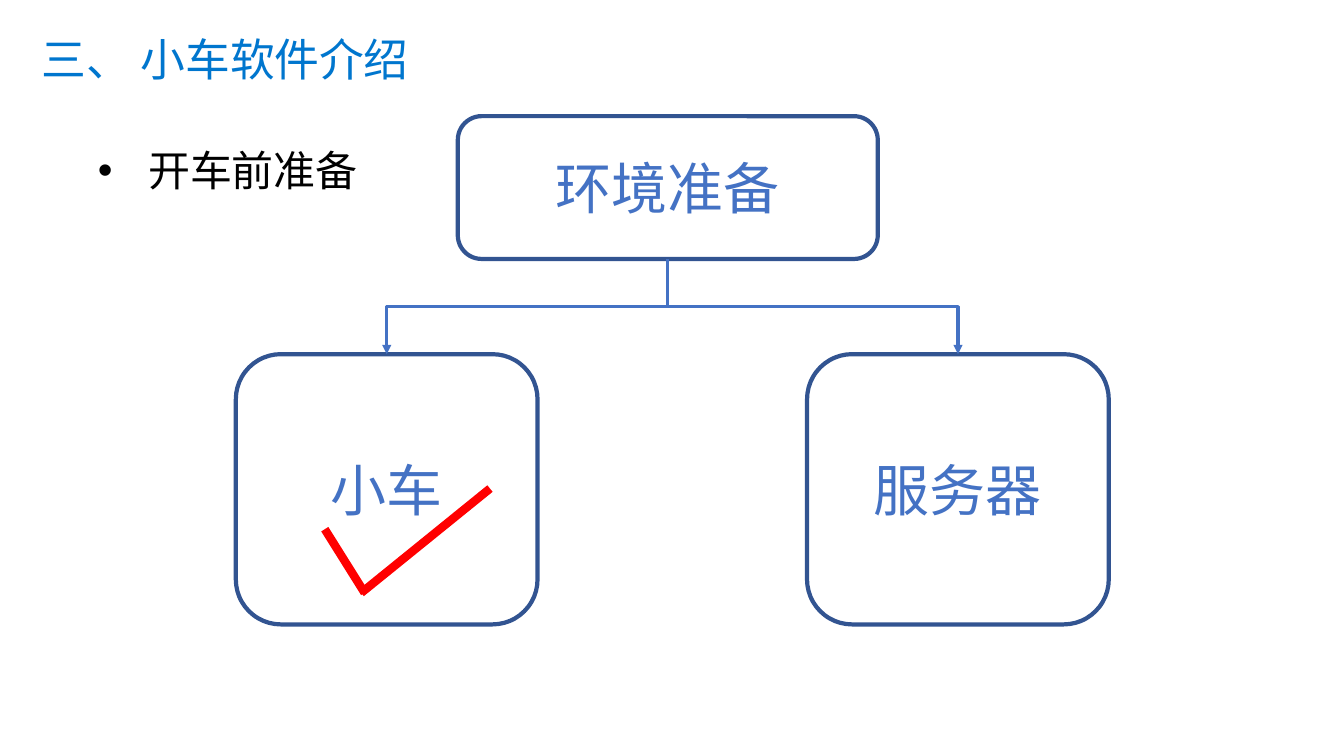
from pptx import Presentation
from pptx.dml.color import RGBColor
from pptx.enum import shapes, text
from pptx.oxml import ns
from pptx.util import Pt
from lxml import etree

FONT = "Noto Sans CJK SC"
COLORS = {
    "title": "0076CE",
    "body": "000000",
    "box_line": "325491",
    "accent": "4472C4",
    "tick": "FF0000",
}


def color(name):
    return RGBColor.from_string(COLORS[name])


def add_run(paragraph, words, size, color_name, spacing=None):
    run = paragraph.add_run()
    run.text = words
    run.font.size = Pt(size)
    run.font.name = FONT
    run.font.color.rgb = color(color_name)
    properties = run.font._element
    etree.SubElement(properties, ns.qn("a:ea"), typeface=FONT)
    if spacing is not None:
        properties.set("spc", str(round(spacing * 100)))


def add_heading(slide, box, words, size, color_name, bullet=False):
    """Put one line of text in the box, with or without a bullet."""
    shape = slide.shapes.add_textbox(*(Pt(length) for length in box))
    frame = shape.text_frame
    frame.word_wrap = True
    frame.margin_left = frame.margin_right = 0
    frame.margin_top = frame.margin_bottom = 0
    paragraph = frame.paragraphs[0]
    paragraph.line_spacing = Pt(37.3)
    if bullet:
        properties = paragraph._p.get_or_add_pPr()
        properties.set("marL", str(Pt(36)))
        properties.set("indent", str(-Pt(36)))
        etree.SubElement(properties, ns.qn("a:buFont"), typeface="Arial")
        etree.SubElement(properties, ns.qn("a:buChar"), char="•")
    add_run(paragraph, words, size, color_name, spacing=-0.2)


def add_node(slide, box, words):
    shape = slide.shapes.add_shape(
        shapes.MSO_SHAPE.ROUNDED_RECTANGLE, *(Pt(length) for length in box))
    shape.shadow.inherit = False
    shape.fill.background()
    shape.line.color.rgb = color("box_line")
    shape.line.width = Pt(3)
    frame = shape.text_frame
    frame.word_wrap = True
    frame.vertical_anchor = text.MSO_ANCHOR.MIDDLE
    paragraph = frame.paragraphs[0]
    paragraph.alignment = text.PP_ALIGN.CENTER
    add_run(paragraph, words, 40, "accent")


def add_line(slide, kind, start, end, color_name, width):
    connector = slide.shapes.add_connector(
        kind, *(Pt(length) for length in (*start, *end)))
    connector.line.color.rgb = color(color_name)
    connector.line.width = Pt(width)
    etree.SubElement(connector._element.spPr, ns.qn("a:effectLst"))
    return connector


def add_branch(slide, start, end):
    """Draw an elbow arrow that leaves downwards, as a turned connector."""
    middle_x, middle_y = (start[0] + end[0]) / 2, (start[1] + end[1]) / 2
    half_width, half_height = (end[1] - start[1]) / 2, abs(end[0] - start[0]) / 2
    to_right = end[0] > start[0]
    side = 1 if to_right else -1
    connector = add_line(
        slide, shapes.MSO_CONNECTOR.ELBOW,
        (middle_x + side * half_width, middle_y - half_height),
        (middle_x - side * half_width, middle_y + half_height),
        "accent", 2.25)
    frame = connector._element.spPr.find(ns.qn("a:xfrm"))
    frame.set("rot", str((270 if to_right else 90) * 60000))
    etree.SubElement(connector.line._get_or_add_ln(), ns.qn("a:tailEnd"),
                     type="triangle")


def add_tree(slide, box):
    """Place the root node at the top and its two children at the bottom."""
    left, top, width, height = box
    root_width, root_height = 300, 102
    child_width, child_height = 215.5, 193
    root_left = left + 158.5
    child_top = top + height - child_height

    # Nodes
    add_node(slide, (root_left, top, root_width, root_height), "环境准备")
    children = [("小车", left), ("服务器", left + width - child_width)]
    for words, child_left in children:
        add_node(slide, (child_left, child_top, child_width, child_height), words)

    # Arrows from the root to each child
    start = (root_left + root_width / 2, top + root_height)
    for _, child_left in children:
        add_branch(slide, start, (child_left + child_width / 2, child_top))


def add_tick(slide, box):
    """Draw the tick mark as two strokes that overlap at the bottom."""
    left, top, width, height = box
    bottom = top + height
    straight = shapes.MSO_CONNECTOR.STRAIGHT
    add_line(slide, straight, (left, top + 29), (left + 28.5, bottom), "tick", 6)
    add_line(slide, straight, (left + width, top), (left + 26, bottom), "tick", 6)


def build_slide(presentation):
    slide = presentation.slides.add_slide(presentation.slide_layouts[6])
    # Bullet line
    add_heading(slide, (70, 102, 217.5, 35.5), "开车前准备", 30, "body", bullet=True)
    # Preparation tree
    add_tree(slide, (168.5, 83, 623.5, 363))
    # Tick on the car node
    add_tick(slide, (232, 349, 118, 74.5))
    # Title
    add_heading(slide, (30, 24, 296.5, 37.5), "三、 小车软件介绍", 32, "title")


def main():
    presentation = Presentation()
    presentation.slide_width, presentation.slide_height = Pt(960), Pt(540)
    build_slide(presentation)
    presentation.save("out.pptx")


if __name__ == "__main__":
    main()
